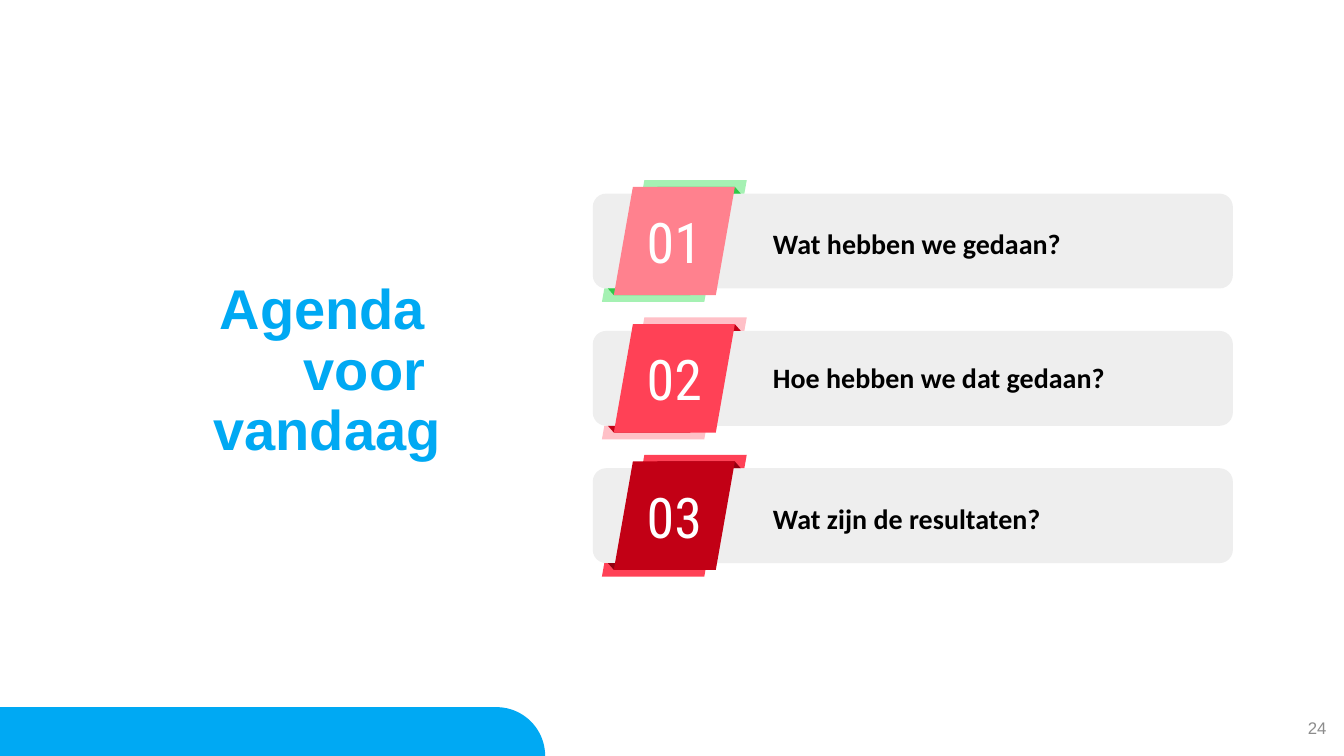
import dataclasses
import math

import pptx
import pptx.dml.color
import pptx.enum.shapes
import pptx.enum.text
import pptx.util

Cm = pptx.util.Cm
ALIGN = pptx.enum.text.PP_ALIGN
ANCHOR = pptx.enum.text.MSO_ANCHOR


@dataclasses.dataclass(frozen=True)
class Theme:
    """Colours, fonts and type sizes of the slide."""
    blue: str = "00A9F3"
    card: str = "EEEEEE"
    white: str = "FFFFFF"
    black: str = "000000"
    grey: str = "8C8C8C"
    pink: str = "FF818E"
    pale_pink: str = "FFC0C7"
    red: str = "FF4156"
    dark_red: str = "C20015"
    deep_red: str = "920010"
    pale_green: str = "A5F1B3"
    green: str = "2FC948"
    font: str = "Arial"
    label_font: str = "Calibri"
    number_font: str = "Roboto Condensed"
    large: int = 40
    medium: int = 20
    small: int = 12


THEME = Theme()


def paint(sp, color):
    """Give a shape a flat fill without line or shadow."""
    sp.shadow.inherit = False
    sp.fill.solid()
    sp.fill.fore_color.rgb = pptx.dml.color.RGBColor.from_string(color)
    sp.line.fill.background()


def polygon(s, points, color):
    """Draw a filled polygon through points given in centimetres."""
    pts = [(Cm(x), Cm(y)) for x, y in points]
    builder = s.shapes.build_freeform(*pts[0])
    builder.add_line_segments(pts[1:], close=True)
    sp = builder.convert_to_shape()
    paint(sp, color)
    return sp


def write(sp, text, font, size, color, align=ALIGN.LEFT, bold=False,
          anchor=ANCHOR.MIDDLE, inset=0.25):
    """Set and format the single paragraph of a shape."""
    tf = sp.text_frame
    tf.word_wrap = True
    tf.vertical_anchor = anchor
    tf.margin_left = tf.margin_right = Cm(inset)
    tf.margin_top = tf.margin_bottom = Cm(inset)
    p = tf.paragraphs[0]
    p.text = text
    p.alignment = align
    for r in p.runs:
        r.font.name = font
        r.font.size = pptx.util.Pt(size)
        r.font.bold = bold
        r.font.color.rgb = pptx.dml.color.RGBColor.from_string(color)
    return p


def add_text(s, box, text, *style, **options):
    """Add a text box at a box given in centimetres."""
    sp = s.shapes.add_textbox(*map(Cm, box))
    return write(sp, text, *style, **options)


def add_footer(s, left, top, width, height):
    """Draw the bar with its rounded top right corner."""
    right, bottom = left + width, top + height
    angles = [math.radians(a) for a in range(90, -1, -3)]
    arc = [(right - height + height * math.cos(a),
            bottom - height * math.sin(a)) for a in angles]
    polygon(s, [(left, bottom), (left, top), *arc], THEME.blue)


def add_title(s, left, top, width, height):
    """Write the slide title on three lines."""
    p = add_text(s, (left, top, width, height), "Agenda \vvoor \vvandaag",
                 THEME.font, THEME.large, THEME.blue, align=ALIGN.RIGHT,
                 bold=True, anchor=ANCHOR.TOP, inset=0)
    p.line_spacing = 0.9


def add_page_number(s, left, top, width, height):
    """Write the page number."""
    add_text(s, (left, top, width, height), "24", THEME.font, THEME.small,
             THEME.grey, align=ALIGN.RIGHT)


def add_agenda_item(s, left, top, width, height, number, label, label_top,
                    tile, flap, fold):
    """Draw one card with its folded number ribbon and label."""
    lip, over = 0.34, 0.17

    def ribbon(points, color):
        return polygon(s, [(left + x, top + y) for x, y in points], color)

    card = s.shapes.add_shape(
        pptx.enum.shapes.MSO_SHAPE.ROUNDED_RECTANGLE,
        Cm(left), Cm(top), Cm(width), Cm(height))
    card.adjustments[0] = 0.14
    paint(card, THEME.card)
    for x, y in ((1.24, -lip), (0.23, height)):
        ribbon([(x + 0.06, y), (x, y + lip), (x + 2.58, y + lip),
                (x + 2.64, y)], flap)
    ribbon([(0.38, height), (0.53, height + over), (2.46, height + over),
            (2.46, height)], fold)
    ribbon([(1.63, -over), (1.57, 0), (3.73, 0), (3.58, -over)], fold)
    sp = ribbon([(1.01, -over), (0.53, height + over), (3.1, height + over),
                 (3.58, -over)], tile)
    write(sp, number, THEME.number_font, THEME.large, THEME.white,
          align=ALIGN.CENTER)
    add_text(s, (left + 4.29, top + label_top, 11.43, 1.3), label,
             THEME.label_font, THEME.medium, THEME.black, bold=True)


def add_agenda(s, left, top, width, height):
    """Stack the agenda items evenly in the box."""
    items = [
        ("01", "Wat hebben we gedaan?", 0.61,
         THEME.pink, THEME.pale_green, THEME.green),
        ("02", "Hoe hebben we dat gedaan?", 0.53,
         THEME.red, THEME.pale_pink, THEME.dark_red),
        ("03", "Wat zijn de resultaten?", 0.61,
         THEME.dark_red, THEME.red, THEME.deep_red),
    ]
    card_height = 2.39
    pitch = (height - card_height) / (len(items) - 1)
    for i, item in enumerate(items):
        add_agenda_item(s, left, top + i * pitch, width, card_height, *item)


def main():
    """Build and save the agenda slide."""
    prs = pptx.Presentation()
    prs.slide_width, prs.slide_height = Cm(33.87), Cm(19.05)
    s = prs.slides.add_slide(prs.slide_layouts[6])
    add_footer(s, 0, 17.82, 13.74, 1.23)
    add_title(s, 0, 7.09, 11.1, 4.72)
    add_page_number(s, 26.06, 17.83, 7.62, 1.02)
    add_agenda(s, 14.94, 4.88, 16.13, 9.31)
    prs.save("out.pptx")


if __name__ == "__main__":
    main()
